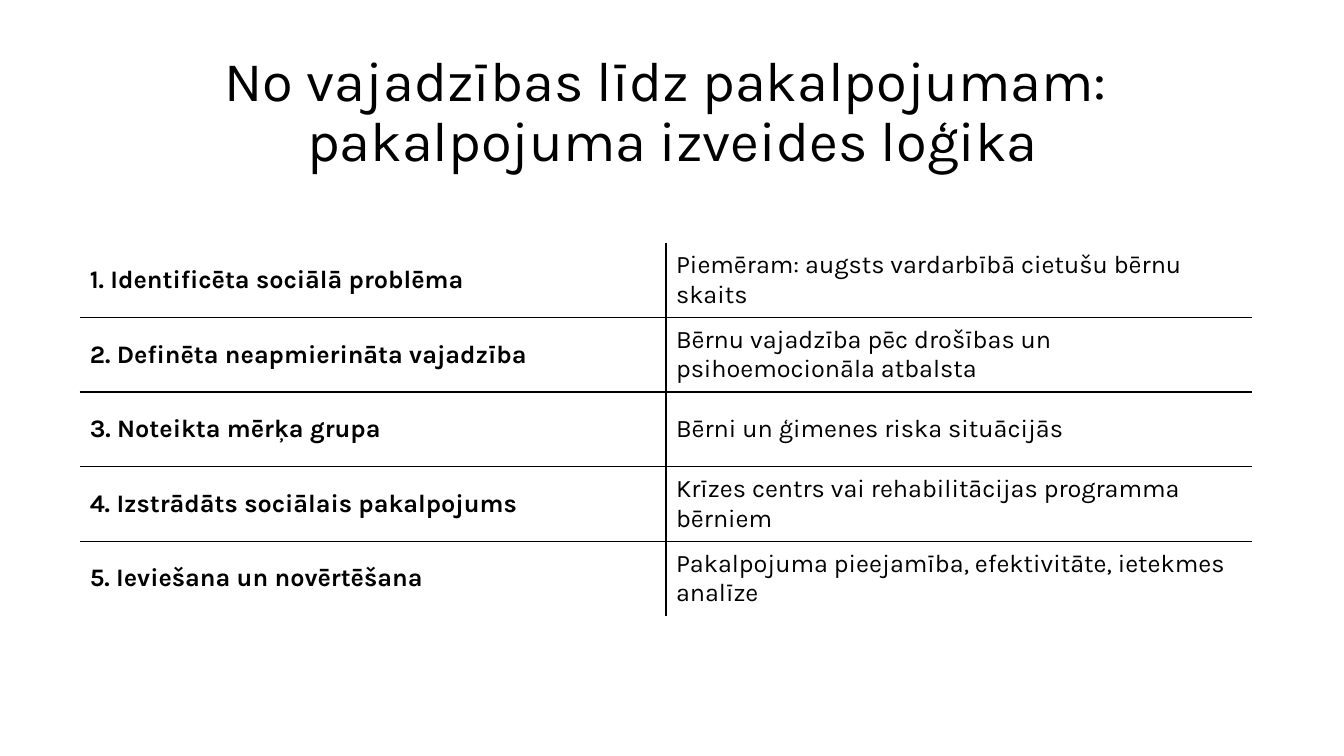
import dataclasses

import lxml.etree
import pptx
import pptx.dml.color
import pptx.enum.text
import pptx.oxml.ns
import pptx.util

Inches = pptx.util.Inches
Pt = pptx.util.Pt

FONT = "Karla"
COLOURS = {"text": "000000", "rule": "000000"}
TITLE = "No vajadzības līdz pakalpojumam: \vpakalpojuma izveides loģika"
TABLE_WIDTH, TABLE_HEIGHT = 11.63, 3.7


@dataclasses.dataclass(frozen=True)
class Step:
    name: str
    example: str


STEPS = [
    Step("1. Identificēta sociālā problēma",
         "Piemēram: augsts vardarbībā cietušu bērnu skaits"),
    Step("2. Definēta neapmierināta vajadzība",
         "Bērnu vajadzība pēc drošības un psihoemocionāla atbalsta"),
    Step("3. Noteikta mērķa grupa",
         "Bērni un ģimenes riska situācijās"),
    Step("4. Izstrādāts sociālais pakalpojums",
         "Krīzes centrs vai rehabilitācijas programma bērniem"),
    Step("5. Ieviešana un novērtēšana",
         "Pakalpojuma pieejamība, efektivitāte, ietekmes analīze"),
]


def style_font(font, size: int, bold: bool = False) -> None:
    font.name = FONT
    font.size = Pt(size)
    font.bold = bold
    font.color.rgb = pptx.dml.color.RGBColor.from_string(COLOURS["text"])


def set_border(cell, side: str, visible: bool) -> None:
    """Draw or hide one cell edge; side is L, R, T or B."""
    qn = pptx.oxml.ns.qn
    properties = cell._tc.get_or_add_tcPr()
    line = lxml.etree.SubElement(properties, qn(f"a:ln{side}"), w=str(Pt(1)))
    if visible:
        fill = lxml.etree.SubElement(line, qn("a:solidFill"))
        lxml.etree.SubElement(fill, qn("a:srgbClr"), val=COLOURS["rule"])
    else:
        lxml.etree.SubElement(line, qn("a:noFill"))


def add_title(page) -> None:
    box = page.shapes.add_textbox(Inches(0.92), Inches(0.4), Inches(11.5), Inches(1.45))
    frame = box.text_frame
    frame.word_wrap = True
    frame.vertical_anchor = pptx.enum.text.MSO_ANCHOR.MIDDLE
    para = frame.paragraphs[0]
    para.text = TITLE
    para.alignment = pptx.enum.text.PP_ALIGN.CENTER
    para.line_spacing = 0.9
    style_font(para.font, 40)


def add_steps(page, steps: list[Step]) -> None:
    table = page.shapes.add_table(
        len(steps), 2, Inches(0.79), Inches(2.41),
        Inches(TABLE_WIDTH), Inches(TABLE_HEIGHT)).table
    table.first_row = table.horz_banding = False
    for column in table.columns:
        column.width = Inches(TABLE_WIDTH / 2)

    for row, step in enumerate(steps):
        table.rows[row].height = Inches(TABLE_HEIGHT / len(steps))
        for column, text in enumerate((step.name, step.example)):
            cell = table.cell(row, column)
            cell.text = text
            cell.vertical_anchor = pptx.enum.text.MSO_ANCHOR.MIDDLE
            style_font(cell.text_frame.paragraphs[0].font, 18, bold=column == 0)
            # Only the inner edges carry a rule
            set_border(cell, "L", column > 0)
            set_border(cell, "R", column == 0)
            set_border(cell, "T", row > 0)
            set_border(cell, "B", row < len(steps) - 1)
            cell.fill.background()


def main() -> None:
    deck = pptx.Presentation()
    deck.slide_width, deck.slide_height = Inches(13.33), Inches(7.5)
    page = deck.slides.add_slide(deck.slide_layouts[6])
    add_title(page)
    add_steps(page, STEPS)
    deck.save("out.pptx")


if __name__ == "__main__":
    main()
